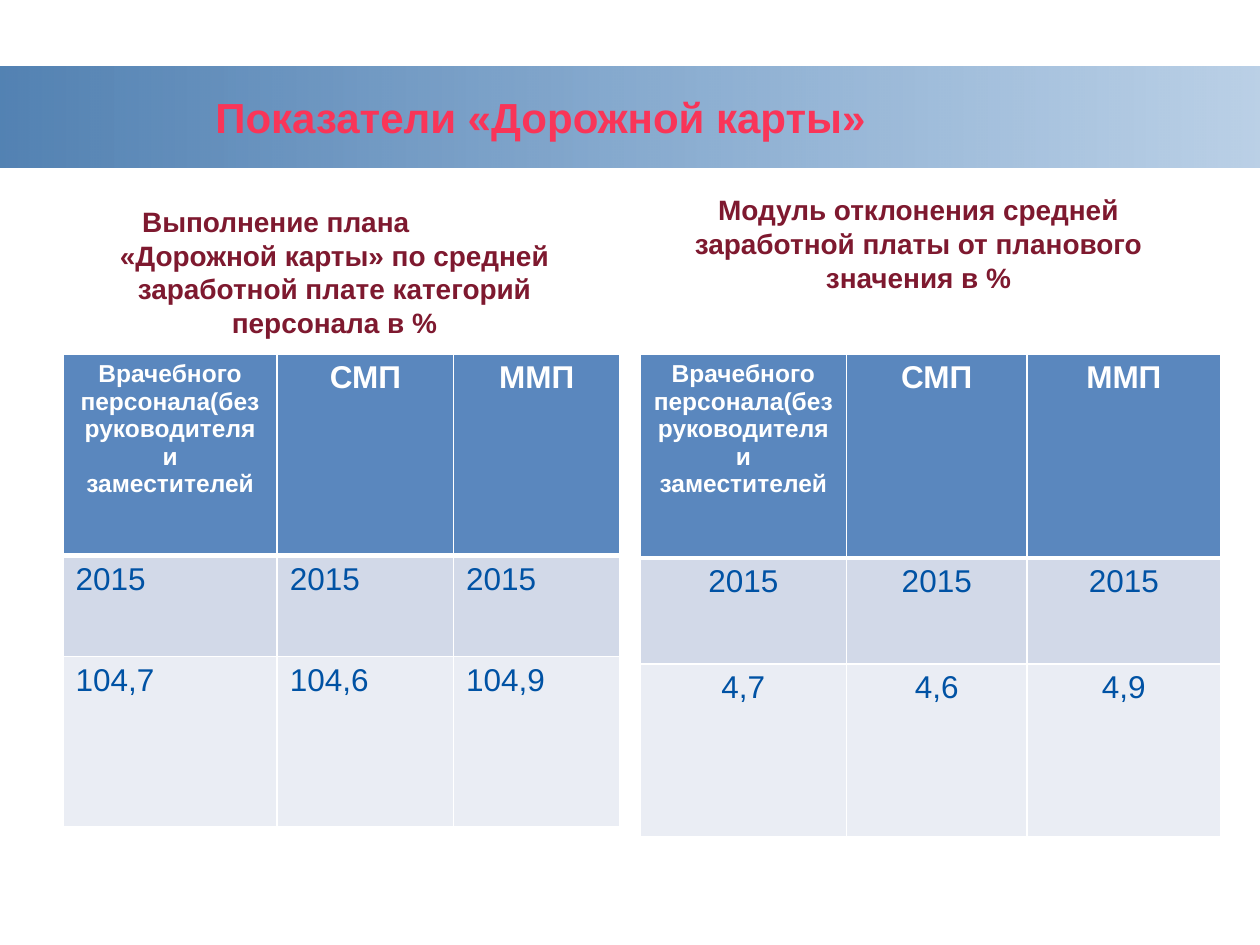
"""Build the slide with the road map indicators: two headed tables under a title band."""
from lxml import etree
from pptx import Presentation
from pptx.dml.color import RGBColor
from pptx.enum.shapes import MSO_SHAPE
from pptx.enum.text import MSO_ANCHOR, PP_ALIGN
from pptx.oxml.ns import qn
from pptx.util import Inches, Pt

RECTANGLE = MSO_SHAPE.RECTANGLE
MIDDLE, BOTTOM = MSO_ANCHOR.MIDDLE, MSO_ANCHOR.BOTTOM
LEFT, CENTER = PP_ALIGN.LEFT, PP_ALIGN.CENTER
WHITE, TITLE_RED, MAROON, BLUE = "FFFFFF", "F93558", "7E192F", "0052A4"
ROW_FILLS = ["5A87BE", "D2D9E8", "EAEDF4"]
CATEGORIES = ["Врачебного персонала(без руководителя и заместителей", "СМП", "ММП"]
YEARS = ["2015"] * 3


def rgb(value):
    return RGBColor.from_string(value)


def write(paragraph, text, size, color, bold, align):
    paragraph.text = text
    paragraph.alignment = align
    font = paragraph.font
    font.name, font.size, font.bold = "Arial", Pt(size), bold
    font.color.rgb = rgb(color)


presentation = Presentation()
presentation.slide_width, presentation.slide_height = Inches(10), Inches(7.5)
slide = presentation.slides.add_slide(presentation.slide_layouts[6])

band = slide.shapes.add_shape(RECTANGLE, Inches(0), Inches(0.53), Inches(10), Inches(0.8))
band.shadow.inherit = False
band.line.fill.background()
band.fill.gradient()
band.fill.gradient_angle = 0
for stop, color in zip(band.fill.gradient_stops, ["00478F", BLUE]):
    stop.color.rgb = rgb(color)
for tint, opacity in zip(band._element.spPr.iter(qn("a:srgbClr")), [68, 27]):
    etree.SubElement(tint, qn("a:alpha"), val=str(opacity * 1000))

title = slide.shapes.add_textbox(Inches(0.5), Inches(0.3), Inches(9), Inches(1.25)).text_frame
title.word_wrap = True
title.vertical_anchor = MIDDLE
title.margin_left = Inches(1.21)
write(title.paragraphs[0], "Показатели «Дорожной карты»", 24, TITLE_RED, True, LEFT)

headings = [
    (0.39, 1.48, 4.53, 1.64, 0.43, [
        ("Выполнение плана", LEFT, 0.64),
        ("«Дорожной карты» по средней заработной плате категорий персонала в %", CENTER, 0),
    ]),
    (5.08, 1.68, 4.42, 0.7, 0.05, [
        ("Модуль отклонения средней заработной платы от планового значения в %", CENTER, 0),
    ]),
]
for left, top, width, height, bottom_margin, lines in headings:
    heading = slide.shapes.add_textbox(
        Inches(left), Inches(top), Inches(width), Inches(height)).text_frame
    heading.word_wrap = True
    heading.vertical_anchor = BOTTOM
    heading.margin_bottom = Inches(bottom_margin)
    for index, (text, align, indent) in enumerate(lines):
        paragraph = heading.add_paragraph() if index else heading.paragraphs[0]
        write(paragraph, text, 16, MAROON, True, align)
        paragraph._p.get_or_add_pPr().set("marL", str(Inches(indent)))

indicators = [
    (0.5, [1.7, 1.4, 1.32], [1.6, 0.8, 1.35], LEFT, ["104,7", "104,6", "104,9"]),
    (5.08, [1.64, 1.43, 1.54], [1.62, 0.84, 1.37], CENTER, ["4,7", "4,6", "4,9"]),
]
for left, widths, heights, value_align, values in indicators:
    table = slide.shapes.add_table(
        3, 3, Inches(left), Inches(2.81), Inches(sum(widths)), Inches(sum(heights))).table
    for column, width in zip(table.columns, widths):
        column.width = Inches(width)
    for row, height in zip(table.rows, heights):
        row.height = Inches(height)
    for r, texts in enumerate([CATEGORIES, YEARS, values]):
        for c, text in enumerate(texts):
            cell = table.cell(r, c)
            header = r == 0
            for side in ["lnL", "lnR", "lnT", "lnB"]:
                thick = (r, side) in [(0, "lnB"), (1, "lnT")]
                border = etree.SubElement(cell._tc.get_or_add_tcPr(), qn(f"a:{side}"),
                                          w=str(Pt(3 if thick else 1)))
                line_fill = etree.SubElement(border, qn("a:solidFill"))
                etree.SubElement(line_fill, qn("a:srgbClr"), val=WHITE)
            cell.fill.solid()
            cell.fill.fore_color.rgb = rgb(ROW_FILLS[r])
            write(cell.text_frame.paragraphs[0], text, 14 if header and c == 0 else 18,
                  WHITE if header else BLUE, header, CENTER if header else value_align)

presentation.save("out.pptx")
